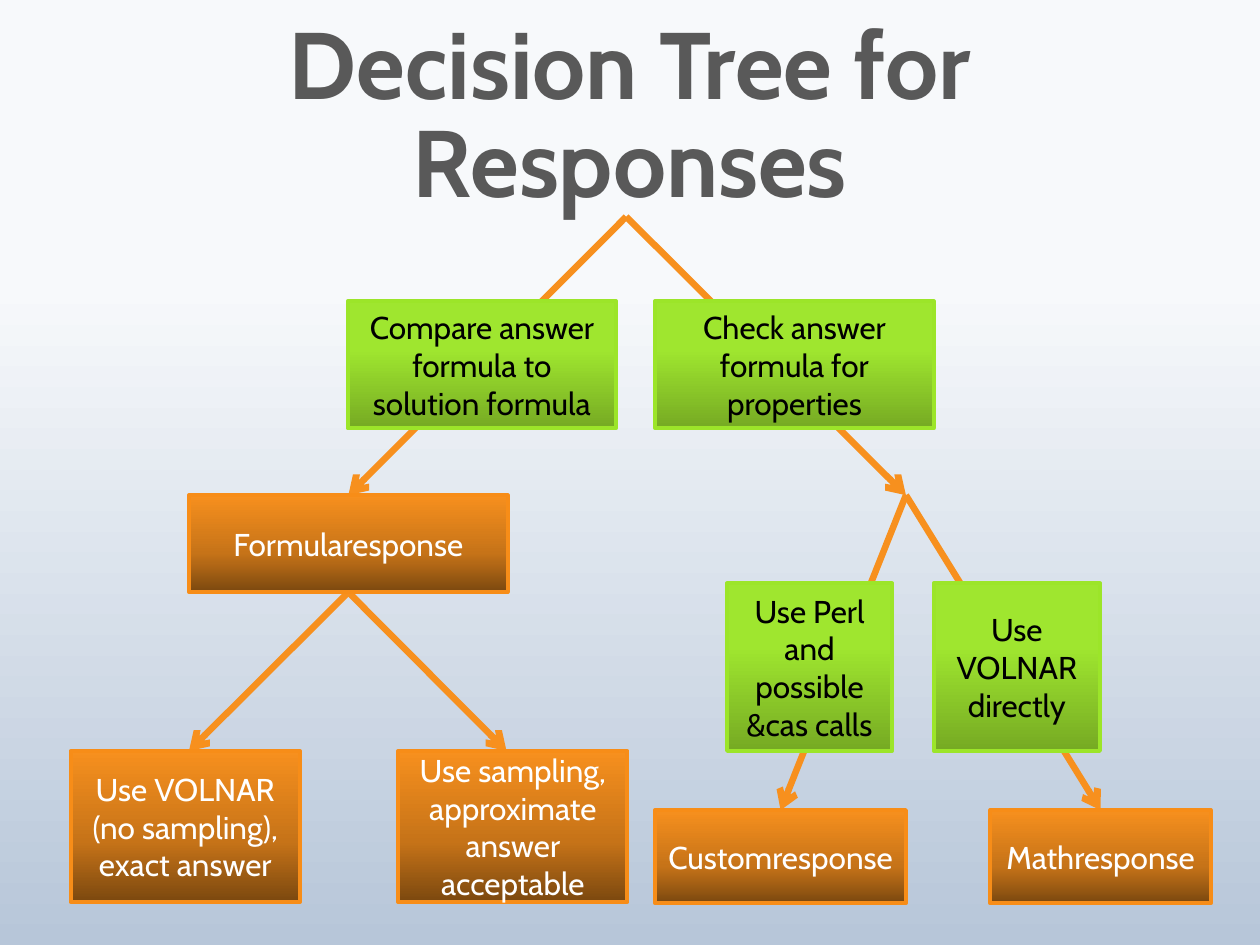
from dataclasses import dataclass
from typing import Optional

from lxml.etree import SubElement
from pptx import Presentation
from pptx.dml.color import RGBColor
from pptx.enum.shapes import MSO_CONNECTOR, MSO_SHAPE
from pptx.enum.text import MSO_ANCHOR, PP_ALIGN
from pptx.oxml.ns import qn
from pptx.util import Inches, Pt

FONT = "Cabin"
TOP, BOTTOM = 0, 2


@dataclass(frozen=True)
class Look:
    stops: tuple
    outline: str
    text: str


@dataclass(frozen=True)
class Node:
    label: str
    left: float
    top: float
    width: float
    height: float
    look: Look


@dataclass(frozen=True)
class Branch:
    start: tuple
    end: tuple
    parent: Optional[str] = None
    child: Optional[str] = None


CHOICE = Look(((38, "9FE62F"), (100, "76AA23")), "9CE529", "000000")
RESPONSE = Look(((0, "F7901E"), (60, "C67318"), (100, "7B480F")), "F78D18", "FFFFFF")
BACKDROP = ((30, "F7F9FB"), (100, "B7C6D9"))

FORMULA, CUSTOM, MATH = "Formularesponse", "Customresponse", "Mathresponse"
NODES = (
    Node("Compare answer formula to solution formula", 2.76, 2.39, 2.13, 1.01, CHOICE),
    Node("Check answer formula for properties", 5.2, 2.39, 2.21, 1.01, CHOICE),
    Node(FORMULA, 1.5, 3.93, 2.53, 0.77, RESPONSE),
    Node("Use VOLNAR (no sampling), exact answer", 0.56, 5.96, 1.82, 1.2, RESPONSE),
    Node("Use sampling, approximate answer acceptable", 3.16, 5.96, 1.82, 1.2, RESPONSE),
    Node("Use Perl and possible &cas calls", 5.77, 4.63, 1.31, 1.33, CHOICE),
    Node("Use VOLNAR directly", 7.41, 4.63, 1.32, 1.33, CHOICE),
    Node(CUSTOM, 5.2, 6.43, 1.99, 0.74, RESPONSE),
    Node(MATH, 7.86, 6.43, 1.75, 0.74, RESPONSE),
)

ROOT, FORMULA_TOP, FORMULA_BOTTOM, FORK = (4.97, 1.72), (2.76, 3.93), (2.76, 4.7), (7.19, 3.93)
BRANCHES = (
    Branch(ROOT, FORMULA_TOP, child=FORMULA),
    Branch(ROOT, FORK),
    Branch(FORMULA_BOTTOM, (1.5, 5.96), parent=FORMULA),
    Branch(FORMULA_BOTTOM, (4.02, 5.96), parent=FORMULA),
    Branch(FORK, (6.19, 6.43), child=CUSTOM),
    Branch(FORK, (8.73, 6.43), child=MATH),
)


def colour(value: str) -> RGBColor:
    """Turn a hex string into a colour."""
    return RGBColor.from_string(value)


def fill_downward(fill, holder, stops: tuple) -> None:
    """Fill from top to bottom with the given percentage and colour stops."""
    fill.gradient()
    fill.gradient_angle = 270
    stop_list = next(holder.iter(qn("a:gsLst")))
    for old_stop in list(stop_list):
        stop_list.remove(old_stop)
    for percent, value in stops:
        stop = SubElement(stop_list, qn("a:gs"), pos=str(percent * 1000))
        SubElement(stop, qn("a:srgbClr"), val=value)


def write(frame, text: str, value: str, size: float, **extra) -> None:
    """Put centred text into a frame."""
    frame.word_wrap = True
    frame.vertical_anchor = MSO_ANCHOR.MIDDLE
    paragraph = frame.paragraphs[0]
    paragraph.alignment = PP_ALIGN.CENTER
    run = paragraph.add_run()
    run.text = text
    for attribute, setting in {"name": FONT, "size": Pt(size), **extra}.items():
        setattr(run.font, attribute, setting)
    run.font.color.rgb = colour(value)


def draw_node(slide, node: Node):
    """Draw one box of the tree."""
    place = map(Inches, (node.left, node.top, node.width, node.height))
    box = slide.shapes.add_shape(MSO_SHAPE.RECTANGLE, *place)
    box.shadow.inherit = False
    fill_downward(box.fill, box._element, node.look.stops)
    box.line.color.rgb = colour(node.look.outline)
    box.line.width = Pt(2.25)
    write(box.text_frame, node.label, node.look.text, 18)
    return box


def draw_branch(slide, branch: Branch, boxes: dict) -> None:
    """Draw one arrow behind the boxes."""
    ends = map(Inches, branch.start + branch.end)
    arrow = slide.shapes.add_connector(MSO_CONNECTOR.STRAIGHT, *ends)
    if branch.parent:
        arrow.begin_connect(boxes[branch.parent], BOTTOM)
    if branch.child:
        arrow.end_connect(boxes[branch.child], TOP)
    arrow.line.color.rgb = colour("F7901E")
    arrow.line.width = Pt(3.75)
    SubElement(arrow.line._get_or_add_ln(), qn("a:tailEnd"), type="arrow")
    SubElement(arrow._element.spPr, qn("a:effectLst"))
    slide.shapes._spTree.insert(2, arrow._element)


def draw_title(slide) -> None:
    """Draw the heading above the tree."""
    title = slide.shapes.add_textbox(*map(Inches, (1, 0.25, 8, 1.38)))
    write(title.text_frame, "Decision Tree for Responses", "595959", 54, bold=True)
    title.text_frame.paragraphs[0].line_spacing = Pt(56)


def main() -> None:
    """Build and save the slide."""
    deck = Presentation()
    deck.slide_width, deck.slide_height = Inches(10), Inches(7.5)
    slide = deck.slides.add_slide(deck.slide_layouts[6])
    fill_downward(slide.background.fill, slide._element, BACKDROP)
    boxes = {node.label: draw_node(slide, node) for node in NODES}
    for branch in BRANCHES:
        draw_branch(slide, branch, boxes)
    draw_title(slide)
    deck.save("out.pptx")


if __name__ == "__main__":
    main()
